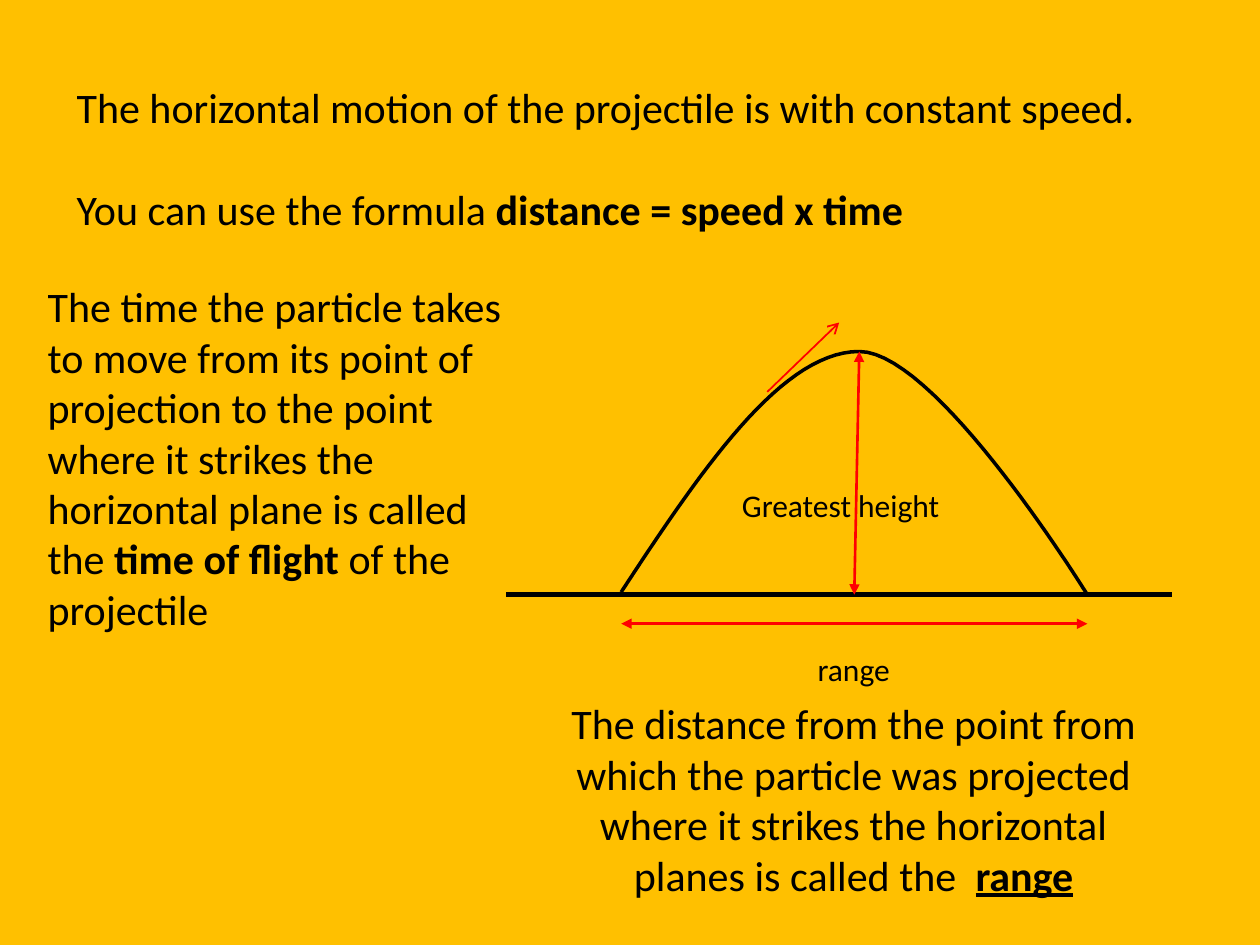
from lxml.etree import SubElement
from pptx import Presentation
from pptx.dml.color import RGBColor
from pptx.enum.shapes import MSO_CONNECTOR
from pptx.enum.text import MSO_AUTO_SIZE, PP_ALIGN
from pptx.oxml.ns import qn
from pptx.util import Inches, Pt

BACKGROUND, INK, RED = "FFC000", "000000", "FF0000"
FONT = "Calibri"
LEFT, CENTER = PP_ALIGN.LEFT, PP_ALIGN.CENTER

# Text: box, size, alignment, paragraphs of (words, style); b = bold, u = underlined
TEXTS = [
    ((0.51, 0.6, 8.9, 1.31), 24, LEFT, [
        [("The horizontal motion of the projectile is with constant speed.", "")],
        [("You can use the formula ", ""), ("distance = speed x time", "b")]]),
    ((5.87, 5.11, 1.81, 0.4), 18, CENTER, [[("range", "")]]),
    ((5.79, 3.81, 2.07, 0.4), 18, LEFT, [[("Greatest height", "")]]),
    ((4.42, 5.49, 4.71, 1.72), 24, CENTER, [
        [("The distance from the point from which the particle was projected "
          "where it strikes the horizontal planes is called the  ", ""),
         ("range", "bu")]]),
    ((0.28, 2.18, 3.94, 2.93), 24, LEFT, [
        [("The time the particle takes to move from its point of projection to "
          "the point where it strikes the horizontal plane is called the ", ""),
         ("time of flight", "b"), (" of the projectile", "")]]),
]
PARAGRAPH_GAP = 29.3

# Diagram: key points of the flight
LAUNCH, PEAK, LANDING = (4.93, 4.7), (6.82, 2.79), (8.63, 4.72)
GROUND_Y, RANGE_Y = 4.72, 4.95
TRAJECTORY = [
    (LAUNCH, (5.56, 3.74), (6.2, 2.79), PEAK),
    (PEAK, (7.44, 2.79), LANDING, LANDING),
]
STEPS = 30

# Lines: start, end, colour, width, arrowhead at start, arrowhead at end
GROUND = ((4.02, GROUND_Y), (9.3, GROUND_Y), INK, 3, None, None)
ARROWS = [
    ((6.09, 3.11), (6.66, 2.56), RED, 1, None, "arrow"),
    (PEAK, (6.78, GROUND_Y), RED, 1.5, "triangle", "triangle"),
    ((LAUNCH[0], RANGE_Y), (LANDING[0], RANGE_Y), RED, 1.5, "triangle", "triangle"),
]


def rgb(color):
    return RGBColor.from_string(color)


def add_line(shapes, start, end, color, width, head, tail):
    ends = [Inches(v) for v in (*start, *end)]
    line = shapes.add_connector(MSO_CONNECTOR.STRAIGHT, *ends)
    line.line.color.rgb = rgb(color)
    line.line.width = Pt(width)
    outline = line.line._get_or_add_ln()
    for tag, arrowhead in (("a:headEnd", head), ("a:tailEnd", tail)):
        if arrowhead:
            SubElement(outline, qn(tag), type=arrowhead)
    SubElement(line._element.spPr, qn("a:effectLst"))


def bezier(curve, t):
    weights = ((1 - t) ** 3, 3 * t * (1 - t) ** 2, 3 * t ** 2 * (1 - t), t ** 3)
    return tuple(Inches(sum(w * p[axis] for w, p in zip(weights, curve)))
                 for axis in (0, 1))


def add_trajectory(shapes):
    points = [bezier(curve, step / STEPS)
              for curve in TRAJECTORY for step in range(1, STEPS + 1)]
    builder = shapes.build_freeform(Inches(LAUNCH[0]), Inches(LAUNCH[1]))
    builder.add_line_segments(points, close=False)
    trajectory = builder.convert_to_shape()
    trajectory.shadow.inherit = False
    trajectory.fill.background()
    trajectory.line.color.rgb = rgb(INK)
    trajectory.line.width = Pt(2)


def add_text(shapes, box, size, alignment, paragraphs):
    frame = shapes.add_textbox(*[Inches(v) for v in box]).text_frame
    frame.word_wrap = True
    frame.auto_size = MSO_AUTO_SIZE.SHAPE_TO_FIT_TEXT
    for index, pieces in enumerate(paragraphs):
        paragraph = frame.add_paragraph() if index else frame.paragraphs[0]
        paragraph.alignment = alignment
        if index:
            paragraph.space_before = Pt(PARAGRAPH_GAP)
        for words, style in pieces:
            run = paragraph.add_run()
            run.text = words
            run.font.name = FONT
            run.font.size = Pt(size)
            run.font.color.rgb = rgb(INK)
            run.font.bold = "b" in style
            run.font.underline = "u" in style


def main():
    deck = Presentation()
    deck.slide_width, deck.slide_height = Inches(10), Inches(7.5)
    slide = deck.slides.add_slide(deck.slide_layouts[6])
    slide.background.fill.solid()
    slide.background.fill.fore_color.rgb = rgb(BACKGROUND)

    # Diagram
    add_line(slide.shapes, *GROUND)
    add_trajectory(slide.shapes)
    for arrow in ARROWS:
        add_line(slide.shapes, *arrow)

    # Statements and labels
    for text in TEXTS:
        add_text(slide.shapes, *text)

    deck.save("out.pptx")


if __name__ == "__main__":
    main()
